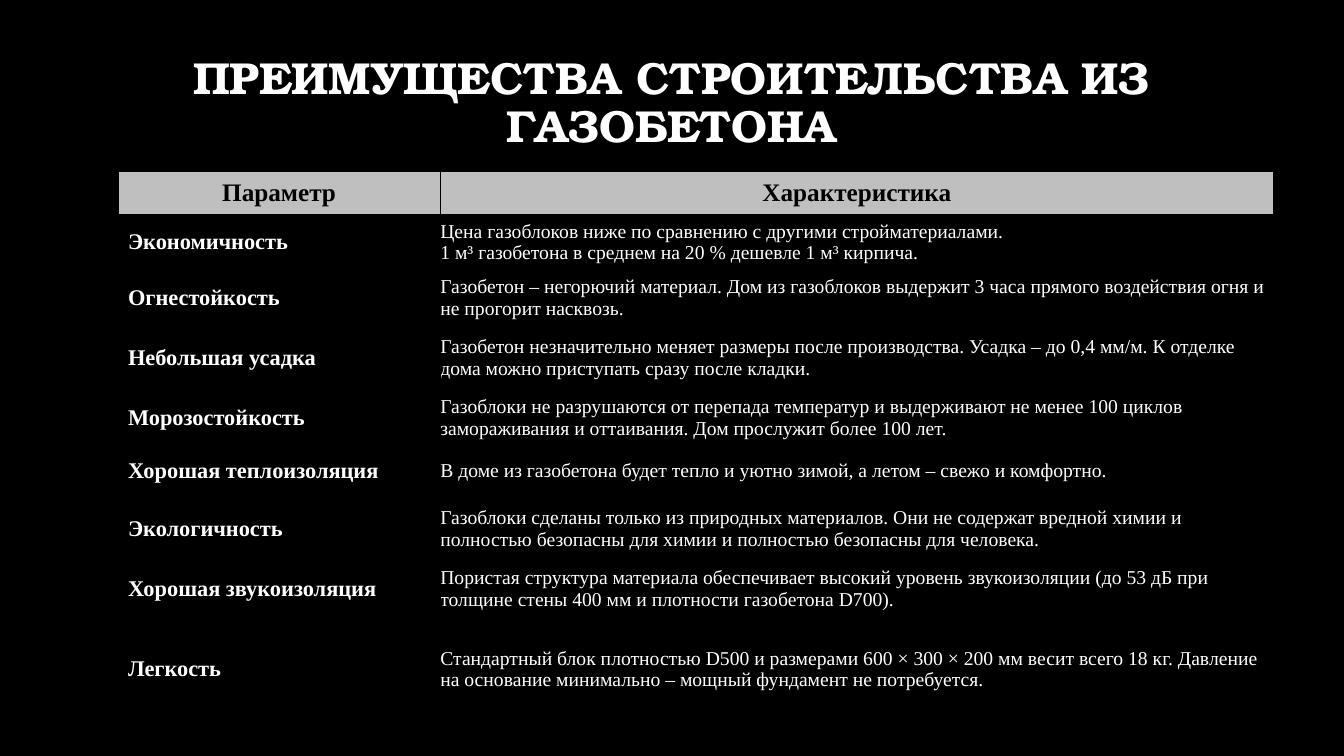
from lxml import etree
from pptx import Presentation
from pptx.dml.color import RGBColor
from pptx.enum.text import MSO_ANCHOR, MSO_AUTO_SIZE, PP_ALIGN
from pptx.oxml.ns import qn
from pptx.util import Inches, Pt

BLACK = RGBColor(0x00, 0x00, 0x00)
WHITE = RGBColor(0xFF, 0xFF, 0xFF)
GREY = RGBColor(0xBF, 0xBF, 0xBF)
TITLE_FONT = "TeX Gyre Bonum"
TABLE_FONT = "Times New Roman"

TITLE = "ПРЕИМУЩЕСТВА СТРОИТЕЛЬСТВА ИЗ ГАЗОБЕТОНА"
HEADER = ("Параметр", "Характеристика")
# Row height in inches, parameter, description
ADVANTAGES = [
    (0.55, "Экономичность",
     "Цена газоблоков ниже по сравнению с другими стройматериалами.\v"
     "1 м³ газобетона в среднем на 20 % дешевле 1 м³ кирпича."),
    (0.55, "Огнестойкость",
     "Газобетон – негорючий материал. Дом из газоблоков выдержит 3 часа "
     "прямого воздействия огня и не прогорит насквозь."),
    (0.64, "Небольшая усадка",
     "Газобетон незначительно меняет размеры после производства. "
     "Усадка – до 0,4 мм/м. К отделке дома можно приступать сразу после кладки."),
    (0.55, "Морозостойкость",
     "Газоблоки не разрушаются от перепада температур и выдерживают не менее "
     "100 циклов замораживания и оттаивания. Дом прослужит более 100 лет."),
    (0.51, "Хорошая теплоизоляция",
     "В доме из газобетона будет тепло и уютно зимой, а летом – свежо и комфортно."),
    (0.64, "Экологичность",
     "Газоблоки сделаны только из природных материалов. Они не содержат вредной "
     "химии и полностью безопасны для химии и полностью безопасны для человека."),
    (0.55, "Хорошая звукоизоляция",
     "Пористая структура материала обеспечивает высокий уровень звукоизоляции "
     "(до 53 дБ при толщине стены 400 мм и плотности газобетона D700)."),
    (1.04, "Легкость",
     "Стандартный блок плотностью D500 и размерами 600 × 300 × 200 мм весит всего "
     "18 кг. Давление на основание минимально – мощный фундамент не потребуется."),
]
HEADER_HEIGHT = 0.43
COLUMN_SHARES = (0.279, 0.721)


def format_runs(p, font, size, color, bold):
    for r in p.runs:
        r.font.name = font
        r.font.size = Pt(size)
        r.font.color.rgb = color
        r.font.bold = bold


def add_title(slide, left, top, width, height):
    sp = slide.shapes.title
    sp.left, sp.top, sp.width, sp.height = map(Inches, (left, top, width, height))
    tf = sp.text_frame
    tf.text = TITLE
    tf.word_wrap = True
    tf.auto_size = MSO_AUTO_SIZE.NONE
    tf.vertical_anchor = MSO_ANCHOR.BOTTOM
    p = tf.paragraphs[0]
    p.alignment = PP_ALIGN.CENTER
    p.line_spacing = 0.9
    format_runs(p, TITLE_FONT, 32, WHITE, True)


def set_borders(cell, widths):
    """Draw black borders; widths are points for left, right, top, bottom."""
    tc_pr = cell._tc.get_or_add_tcPr()
    for i, (side, width) in enumerate(zip("LRTB", widths)):
        ln = etree.Element(qn(f"a:ln{side}"), w=str(Pt(width)))
        fill = etree.SubElement(ln, qn("a:solidFill"))
        etree.SubElement(fill, qn("a:srgbClr"), val=str(BLACK))
        tc_pr.insert(i, ln)


def fill_cell(cell, text, size, color, bold):
    cell.margin_left = cell.margin_right = cell.margin_top = cell.margin_bottom = 0
    cell.vertical_anchor = MSO_ANCHOR.MIDDLE
    p = cell.text_frame.paragraphs[0]
    p.text = text
    format_runs(p, TABLE_FONT, size, color, bold)
    return p


def add_advantages_table(slide, left, top, width):
    heights = [HEADER_HEIGHT] + [row[0] for row in ADVANTAGES]
    rows = [HEADER] + [row[1:] for row in ADVANTAGES]
    last = len(rows) - 1
    frame = slide.shapes.add_table(len(rows), 2, Inches(left), Inches(top),
                                   Inches(width), Inches(sum(heights)))
    table = frame.table
    table.first_row = table.horz_banding = False
    for column, share in zip(table.columns, COLUMN_SHARES):
        column.width = Inches(width * share)

    for i, (height, texts) in enumerate(zip(heights, rows)):
        table.rows[i].height = Inches(height)
        for j, text in enumerate(texts):
            cell = table.cell(i, j)
            if i == 0:  # header row
                p = fill_cell(cell, text, 18, BLACK, True)
                p.alignment = PP_ALIGN.CENTER
                cell.fill.solid()
                cell.fill.fore_color.rgb = GREY
            else:
                cell.fill.background()
                if j == 0:  # parameter name
                    p = fill_cell(cell, text, 16, WHITE, True)
                    p._p.get_or_add_pPr().set("marL", str(Inches(0.1)))
                else:  # description
                    fill_cell(cell, text, 14, WHITE, False)
            # Heavier lines around the table and under the header
            set_borders(cell, (1 if j == 0 else 0.5, 1 if j == 1 else 0.5,
                               1 if i <= 1 else 0.5, 1 if i in (0, last) else 0.5))


def main():
    prs = Presentation()
    prs.slide_width, prs.slide_height = Inches(13.33), Inches(7.5)
    slide = prs.slides.add_slide(prs.slide_layouts[0])
    slide.background.fill.solid()
    slide.background.fill.fore_color.rgb = BLACK
    subtitle = slide.placeholders[1].element
    subtitle.getparent().remove(subtitle)

    add_title(slide, 1.74, 0.48, 9.84, 1.08)
    add_advantages_table(slide, 1.17, 1.7, 11.46)
    prs.save("out.pptx")


if __name__ == "__main__":
    main()
